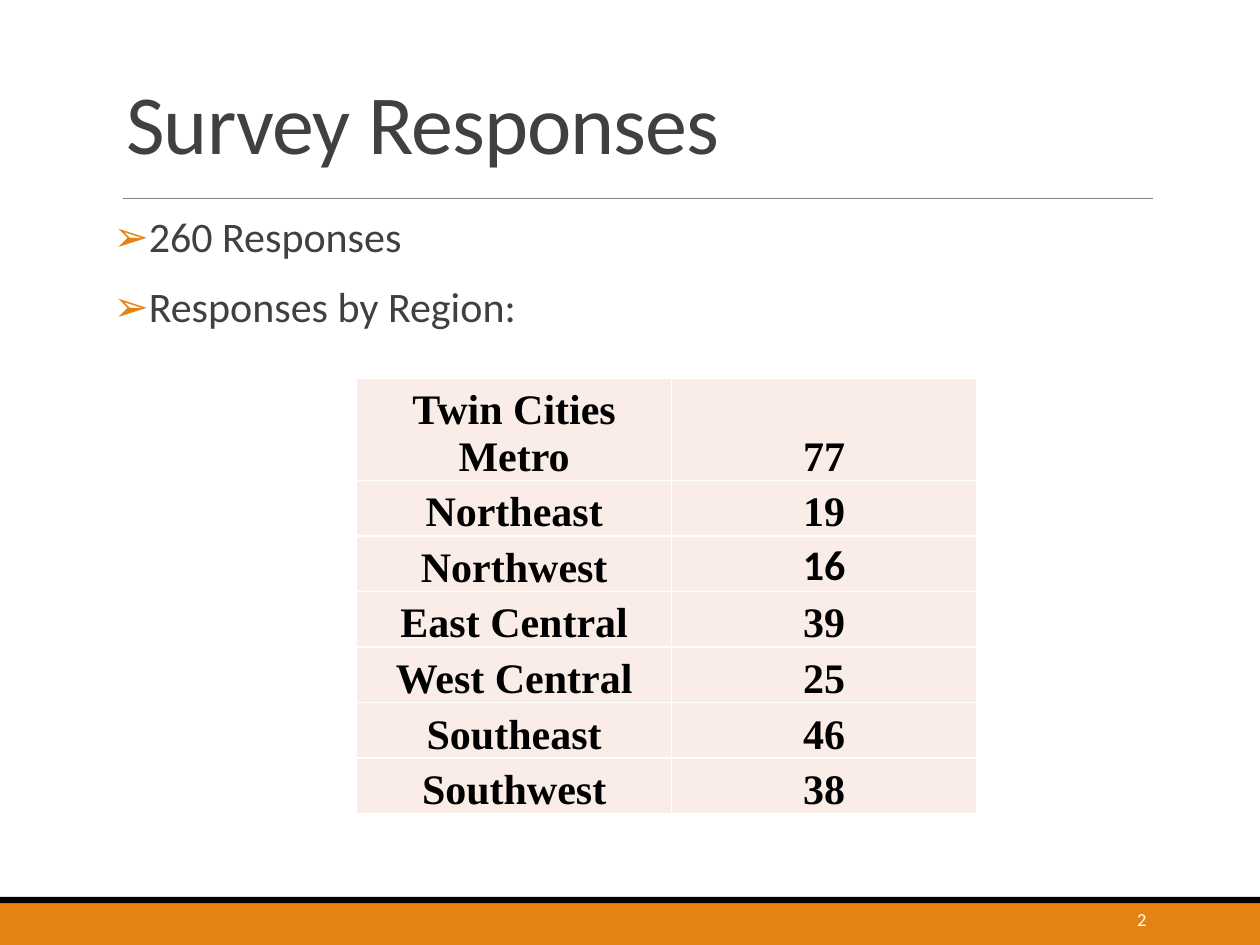
from lxml import etree
from pptx import Presentation
from pptx import util as u
from pptx.dml.color import RGBColor
from pptx.enum import shapes, text
from pptx.oxml.ns import qn

COLOURS = {
    "orange": "E48312",
    "black": "000000",
    "white": "FFFFFF",
    "grey": "808080",
    "text": "404040",
    "cell": "FAEDE7",
}
BODY_FONT = "Calibri"
TABLE_FONT = "Times New Roman"
REGIONS = [
    ("Twin Cities Metro", "77"),
    ("Northeast", "19"),
    ("Northwest", "16"),
    ("East Central", "39"),
    ("West Central", "25"),
    ("Southeast", "46"),
    ("Southwest", "38"),
]


def colour(name):
    return RGBColor.from_string(COLOURS[name])


def set_font(paragraph, size, colour_name, name=BODY_FONT, bold=False):
    font = paragraph.font
    font.name, font.size, font.bold = name, u.Pt(size), bold
    font.color.rgb = colour(colour_name)


def place(shape, left, top, width, height):
    shape.left, shape.top = u.Cm(left), u.Cm(top)
    shape.width, shape.height = u.Cm(width), u.Cm(height)


def add_band(slide, top, height, colour_name):
    """Add a full-width strip at the foot of the slide."""
    band = slide.shapes.add_shape(
        shapes.MSO_SHAPE.RECTANGLE, 0, u.Cm(top), u.Cm(25.4), u.Cm(height))
    band.shadow.inherit = False
    band.fill.solid()
    band.fill.fore_color.rgb = colour(colour_name)
    band.line.fill.background()


def add_rule(slide, left, right, top):
    rule = slide.shapes.add_connector(
        shapes.MSO_CONNECTOR.STRAIGHT, u.Cm(left), u.Cm(top), u.Cm(right), u.Cm(top))
    rule.line.color.rgb = colour("grey")
    rule.line.width = u.Pt(0.5)
    etree.SubElement(rule._element.spPr, qn("a:effectLst"))


def fill_title(title, wording):
    place(title, 2.29, 0.79, 20.95, 2.79)
    frame = title.text_frame
    frame.text = wording
    frame.auto_size = text.MSO_AUTO_SIZE.NONE
    frame.vertical_anchor = text.MSO_ANCHOR.BOTTOM
    paragraph = frame.paragraphs[0]
    paragraph.alignment = text.PP_ALIGN.LEFT
    paragraph.line_spacing = 0.85
    set_font(paragraph, 48, "text")
    paragraph.runs[0].font._element.set("spc", "-50")


def add_bullet(paragraph):
    properties = paragraph._p.get_or_add_pPr()
    indent = u.Cm(0.25)
    properties.set("marL", str(indent))
    properties.set("indent", str(-indent))
    bullet_colour = etree.SubElement(properties, qn("a:buClr"))
    etree.SubElement(bullet_colour, qn("a:srgbClr"), val=COLOURS["orange"])
    etree.SubElement(properties, qn("a:buChar"), char="➢")


def fill_list(body, items):
    place(body, 2.29, 4.24, 20.95, 12.07)
    frame = body.text_frame
    frame.text = "\n".join(items)
    frame.auto_size = text.MSO_AUTO_SIZE.NONE
    frame.margin_left = frame.margin_right = 0
    for index, paragraph in enumerate(frame.paragraphs):
        add_bullet(paragraph)
        paragraph.line_spacing = 0.9
        paragraph.space_before = u.Pt(12 if index else 0)
        paragraph.space_after = u.Pt(2)
        set_font(paragraph, 24, "text")


def add_page_number(slide, number):
    box = slide.shapes.add_textbox(u.Cm(20.62), u.Cm(18.11), u.Cm(2.74), u.Cm(0.84))
    frame = box.text_frame
    frame.word_wrap = True
    frame.vertical_anchor = text.MSO_ANCHOR.MIDDLE
    frame.text = number
    paragraph = frame.paragraphs[0]
    paragraph.alignment = text.PP_ALIGN.RIGHT
    set_font(paragraph, 10.5, "white")


def add_borders(cell):
    properties = cell._tc.get_or_add_tcPr()
    for side in ("lnL", "lnR", "lnT", "lnB"):
        border = etree.SubElement(properties, qn(f"a:{side}"), w=str(u.Pt(1)))
        solid = etree.SubElement(border, qn("a:solidFill"))
        etree.SubElement(solid, qn("a:srgbClr"), val=COLOURS["white"])


def fill_cell(cell, wording):
    add_borders(cell)
    cell.fill.solid()
    cell.fill.fore_color.rgb = colour("cell")
    cell.margin_left = cell.margin_right = cell.margin_top = u.Cm(0.03)
    cell.margin_bottom = 0
    cell.vertical_anchor = text.MSO_ANCHOR.BOTTOM
    cell.text = wording
    paragraph = cell.text_frame.paragraphs[0]
    paragraph.alignment = text.PP_ALIGN.CENTER
    font_name = BODY_FONT if wording == "16" else TABLE_FONT
    set_font(paragraph, 24, "black", font_name, bold=True)


def add_region_table(slide):
    widths, row_height = (6.35, 6.15), 1.12
    table = slide.shapes.add_table(
        len(REGIONS), len(widths), u.Cm(7.19), u.Cm(7.62),
        u.Cm(sum(widths)), u.Cm(row_height * len(REGIONS))).table
    table.first_row = table.horz_banding = False
    for column, width in zip(table.columns, widths):
        column.width = u.Cm(width)
    for row, values in zip(table.rows, REGIONS):
        row.height = u.Cm(row_height)
        for cell, wording in zip(row.cells, values):
            fill_cell(cell, wording)


def main():
    presentation = Presentation()
    presentation.slide_width, presentation.slide_height = u.Cm(25.4), u.Cm(19.05)
    slide = presentation.slides.add_slide(presentation.slide_layouts[1])
    add_band(slide, 18.1, 0.95, "orange")
    add_band(slide, 18.08, 0.13, "black")
    add_rule(slide, 2.48, 23.24, 4.01)
    fill_title(slide.shapes.title, "Survey Responses")
    fill_list(slide.placeholders[1], ["260 Responses", "Responses by Region:"])
    add_page_number(slide, "2")
    add_region_table(slide)
    presentation.save("out.pptx")


if __name__ == "__main__":
    main()
